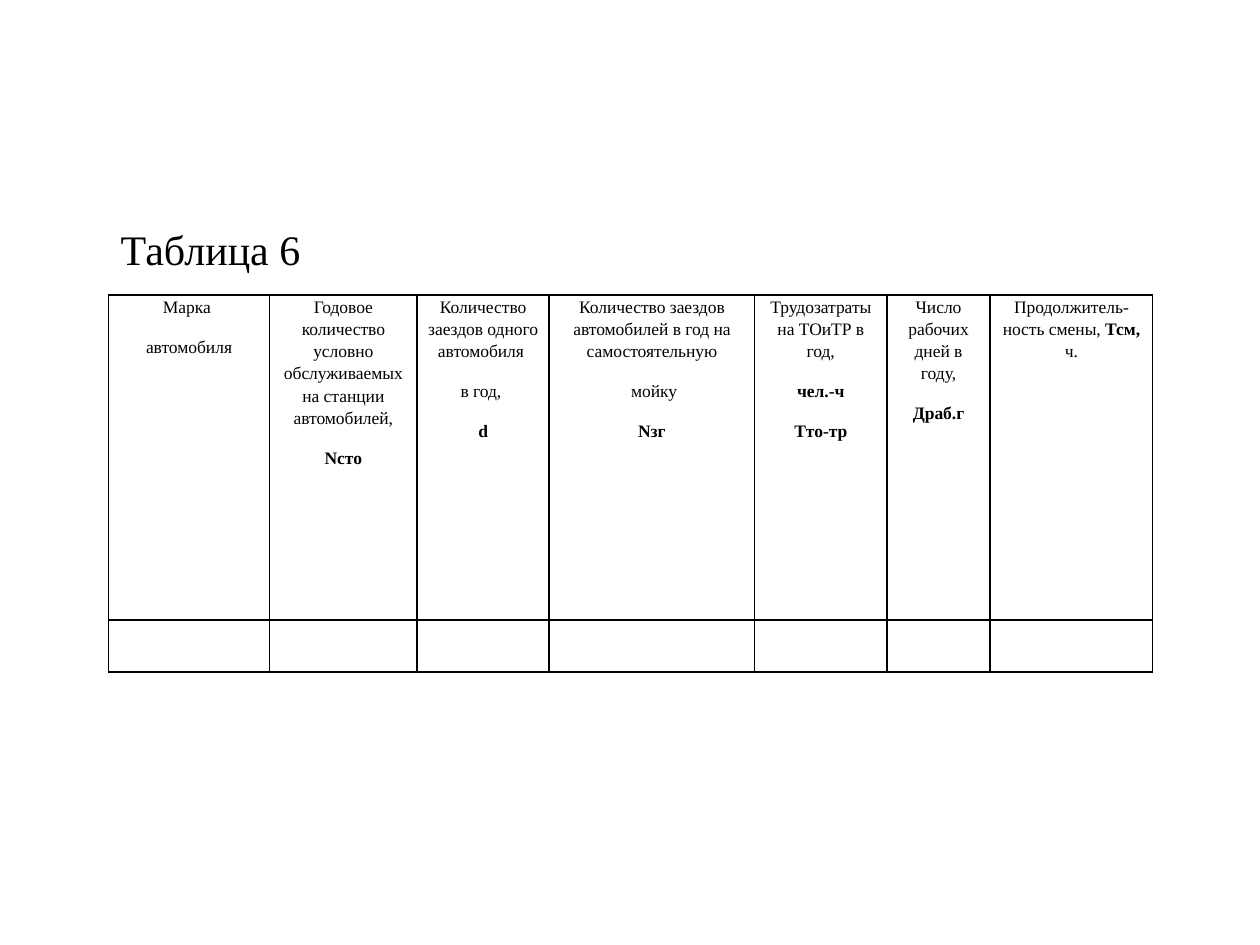
from lxml.etree import SubElement
from pptx import Presentation
from pptx.dml.color import RGBColor
from pptx.enum.text import MSO_ANCHOR as Anchor, MSO_AUTO_SIZE as AutoSize, PP_ALIGN as Align
from pptx.oxml.ns import qn
from pptx.util import Pt

FONT = "Times New Roman"
BLACK = "000000"
BOLD_MARK = "*"
COLUMN_WIDTHS = [92.2, 84.2, 75.6, 117.4, 75.6, 59, 92.9]
ROW_HEIGHTS = [185.8, 29.5]
HEADERS = [
    ["Марка ", "автомобиля"],
    ["Годовое количество условно обслуживаемых на станции автомобилей,", "*Ncтo*"],
    ["Количество заездов одного автомобиля ", "в год, ", "*d*"],
    ["Количество заездов автомобилей в год на самостоятельную", " мойку", "*Nзг*"],
    ["Трудозатраты на ТОиТР в год,", "*чел.-ч*", "*Тто-тр*"],
    ["Число рабочих дней в году,", "*Драб.г*"],
    ["Продолжитель-ность смены, *Тсм, *ч."],
]


def color(value):
    return RGBColor.from_string(value)


def format_font(font, size, bold=False):
    font.name = FONT
    font.size = Pt(size)
    font.bold = bold
    font.color.rgb = color(BLACK)


def add_title(slide, text, left, top, width, height):
    shape = slide.shapes.add_textbox(Pt(left), Pt(top), Pt(width), Pt(height))
    frame = shape.text_frame
    frame.text = text
    frame.word_wrap = False
    frame.auto_size = AutoSize.SHAPE_TO_FIT_TEXT
    frame.vertical_anchor = Anchor.MIDDLE
    paragraph = frame.paragraphs[0]
    paragraph.alignment = Align.JUSTIFY
    format_font(paragraph.runs[0].font, 24)


def set_borders(cell, width):
    properties = cell._tc.get_or_add_tcPr()
    for side in ("a:lnL", "a:lnR", "a:lnT", "a:lnB"):
        line = SubElement(properties, qn(side), w=str(Pt(width)))
        fill = SubElement(line, qn("a:solidFill"))
        SubElement(fill, qn("a:srgbClr"), val=BLACK)


def format_cell(cell):
    cell.margin_left = cell.margin_right = Pt(5)
    cell.margin_top = cell.margin_bottom = 0
    set_borders(cell, 1)
    cell.fill.background()


def write_header(cell, lines):
    frame = cell.text_frame
    frame.text = "\n".join(lines)
    for paragraph, line in zip(frame.paragraphs, lines):
        paragraph.text = ""
        paragraph.alignment = Align.CENTER
        paragraph.line_spacing = 1.15
        paragraph.space_after = Pt(10)
        for index, part in enumerate(line.split(BOLD_MARK)):
            if part:
                run = paragraph.add_run()
                run.text = part
                format_font(run.font, 10, bold=index % 2 == 1)


def add_table(slide, left, top):
    frame = slide.shapes.add_table(
        len(ROW_HEIGHTS), len(COLUMN_WIDTHS), Pt(left), Pt(top),
        Pt(sum(COLUMN_WIDTHS)), Pt(sum(ROW_HEIGHTS)))
    table = frame.table
    table.first_row = table.horz_banding = False
    for column, width in zip(table.columns, COLUMN_WIDTHS):
        column.width = Pt(width)
    for row, height in zip(table.rows, ROW_HEIGHTS):
        row.height = Pt(height)
    for cell in table.iter_cells():
        format_cell(cell)
    for column, lines in enumerate(HEADERS):
        write_header(table.cell(0, column), lines)


def main():
    presentation = Presentation()
    presentation.slide_width = Pt(720)
    presentation.slide_height = Pt(540)
    slide = presentation.slides.add_slide(presentation.slide_layouts[6])
    add_table(slide, 61.9, 168.6)
    add_title(slide, "Таблица 6 ", 61.9, 124, 123, 36)
    presentation.save("out.pptx")


if __name__ == "__main__":
    main()
